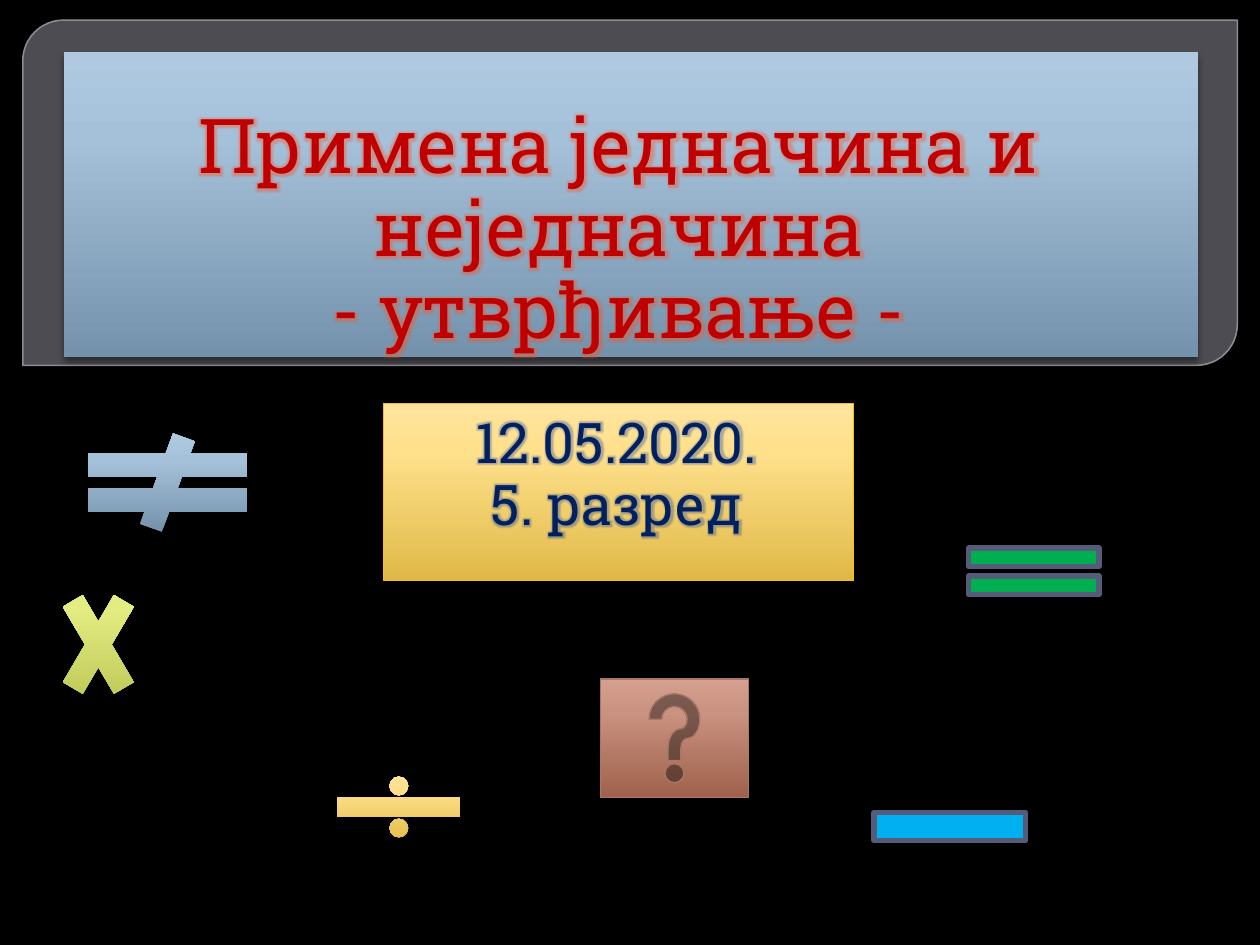
from pptx import Presentation
from pptx.dml.color import RGBColor
from pptx.enum.shapes import MSO_SHAPE as SHAPE
from pptx.enum.text import MSO_ANCHOR as ANCHOR, MSO_AUTO_SIZE as AUTO, PP_ALIGN as ALIGN
from pptx.oxml import parse_xml
from pptx.oxml.ns import nsdecls, qn
from pptx.util import Pt

# Gradient stops from bottom to top
BLUE = ("7492AB", "A5C1DA", "AFC9E1")
GOLD = ("DFB947", "FFE08B", "FFE49D")
LIME = ("B5BF4D", "E2EC81", "EBF48F")
BROWN = ("9F614C", "CA9280", "D5A090")
STOPS = (0, 72, 100)


def rgb(value):
    return RGBColor.from_string(value)


def a_xml(tag, attrs="", body=""):
    """Parse one element of the drawing namespace."""
    return parse_xml(f"<a:{tag} {nsdecls('a')} {attrs}>{body}</a:{tag}>")


def alpha_color(color, percent):
    return f'<a:srgbClr val="{color}"><a:alpha val="{percent * 1000}"/></a:srgbClr>'


class Deck:
    font = "Roboto Slab"

    def __init__(self, width, height):
        self.prs = Presentation()
        self.prs.slide_width, self.prs.slide_height = Pt(width), Pt(height)
        self.s = None

    def new_slide(self, background):
        self.s = self.prs.slides.add_slide(self.prs.slide_layouts[0])
        fill = self.s.background.fill
        fill.solid()
        fill.fore_color.rgb = rgb(background)

    def paint(self, sp, fill, line=None, width=0.75):
        """Fill with one colour, or with a shadowed gradient for a tuple."""
        sp.fill.solid()
        sp.shadow.inherit = False
        if isinstance(fill, tuple):
            stops = "".join(f'<a:gs pos="{pos * 1000}"><a:srgbClr val="{c}"/></a:gs>'
                            for pos, c in zip(STOPS, fill))
            gradient = a_xml("gradFill", 'rotWithShape="1"',
                             f'<a:gsLst>{stops}</a:gsLst><a:lin ang="16200000" scaled="0"/>')
            props = sp.element.spPr
            props.replace(props.find(qn("a:solidFill")), gradient)
            props.find(qn("a:effectLst")).append(
                a_xml("outerShdw", f'blurRad="{Pt(4)}" dist="{Pt(3)}" dir="5400000" rotWithShape="0"',
                      alpha_color("000000", 43)))
        else:
            sp.fill.fore_color.rgb = rgb(fill)
        if line:
            sp.line.color.rgb = rgb(line)
            sp.line.width = Pt(width)
        else:
            sp.line.fill.background()

    def shape(self, kind, box, fill, line=None, width=0.75):
        sp = self.s.shapes.add_shape(kind, *map(Pt, box))
        self.paint(sp, fill, line, width)
        return sp

    def panel(self, box, fill, line, opacity):
        """Add the translucent panel behind everything else."""
        sp = self.shape(SHAPE.ROUND_2_DIAG_RECTANGLE, box, fill, line, 0.87)
        sp.adjustments[0], sp.adjustments[1] = 0.118, 0
        color = sp.element.spPr.find(qn("a:solidFill"))[0]
        color.append(a_xml("alpha", f'val="{opacity * 1000}"'))
        self.s.shapes.element.insert(2, sp.element)

    def text_box(self, index, box, paragraphs, size, color, glow, fill,
                 line=None, anchor=ANCHOR.TOP, insets=(3.6, 3.6, 18, 3.6), spacing=0.9):
        """Fill a placeholder; each paragraph is a list of lines."""
        sp = self.s.placeholders[index]
        sp.left, sp.top, sp.width, sp.height = map(Pt, box)
        self.paint(sp, fill, line)
        tf = sp.text_frame
        tf.word_wrap, tf.auto_size, tf.vertical_anchor = True, AUTO.NONE, anchor
        tf.margin_left, tf.margin_top, tf.margin_right, tf.margin_bottom = map(Pt, insets)
        for i, lines in enumerate(paragraphs):
            p = tf.add_paragraph() if i else tf.paragraphs[0]
            p.alignment, p.line_spacing, p.space_before = ALIGN.CENTER, spacing, Pt(0)
            for j, text in enumerate(lines):
                if j:
                    p.add_line_break()
                self.run(p, text, size, color, glow)

    def run(self, p, text, size, color, glow):
        r = p.add_run()
        r.text = text
        r.font.size, r.font.name = Pt(size), self.font
        r.font.color.rgb = rgb(color)
        effect = f'<a:glow rad="{Pt(5)}">{alpha_color(glow, 40)}</a:glow>'
        r.font.fill  # the glow has to follow the fill
        r.font._element.find(qn("a:solidFill")).addnext(a_xml("effectLst", "", effect))


def main():
    deck = Deck(720, 540)
    deck.new_slide("000000")
    deck.panel((13, 11.5, 694, 197.3), "76767E", "8C8C94", 65)
    deck.text_box(0, (36.7, 30, 648, 174),
                  [["Примена једначина и неједначина", "- утврђивање -"]],
                  43.2, "C00000", "FF5020", BLUE, anchor=ANCHOR.BOTTOM,
                  insets=(3.6, 3.6, 18, 1), spacing=0.91)
    deck.text_box(1, (219, 230.4, 268.6, 101.2), [["12.05.2020."], ["5. разред"]],
                  32, "002060", "3050A0", GOLD, line="FFC000",
                  insets=(17.3, 6, 19.4, 3.6), spacing=0.92)
    deck.shape(SHAPE.MATH_DIVIDE, (180, 438.5, 95.8, 45.4), GOLD)
    deck.shape(SHAPE.MATH_MULTIPLY, (28.1, 320.4, 56.2, 95.8), LIME)
    deck.shape(SHAPE.MATH_EQUAL, (540, 303.8, 101.5, 45.4), "00B050", "545C79", 3)
    deck.shape(SHAPE.MATH_NOT_EQUAL, (33.8, 247.7, 123.8, 56.2), BLUE)
    deck.shape(SHAPE.MATH_MINUS, (483.8, 438.5, 118.1, 67.7), "00B0F0", "545C79", 3)
    deck.shape(SHAPE.ACTION_BUTTON_HELP, (343.1, 388.1, 84.6, 67.7), BROWN, "A77867")
    deck.prs.save("out.pptx")


if __name__ == "__main__":
    main()
